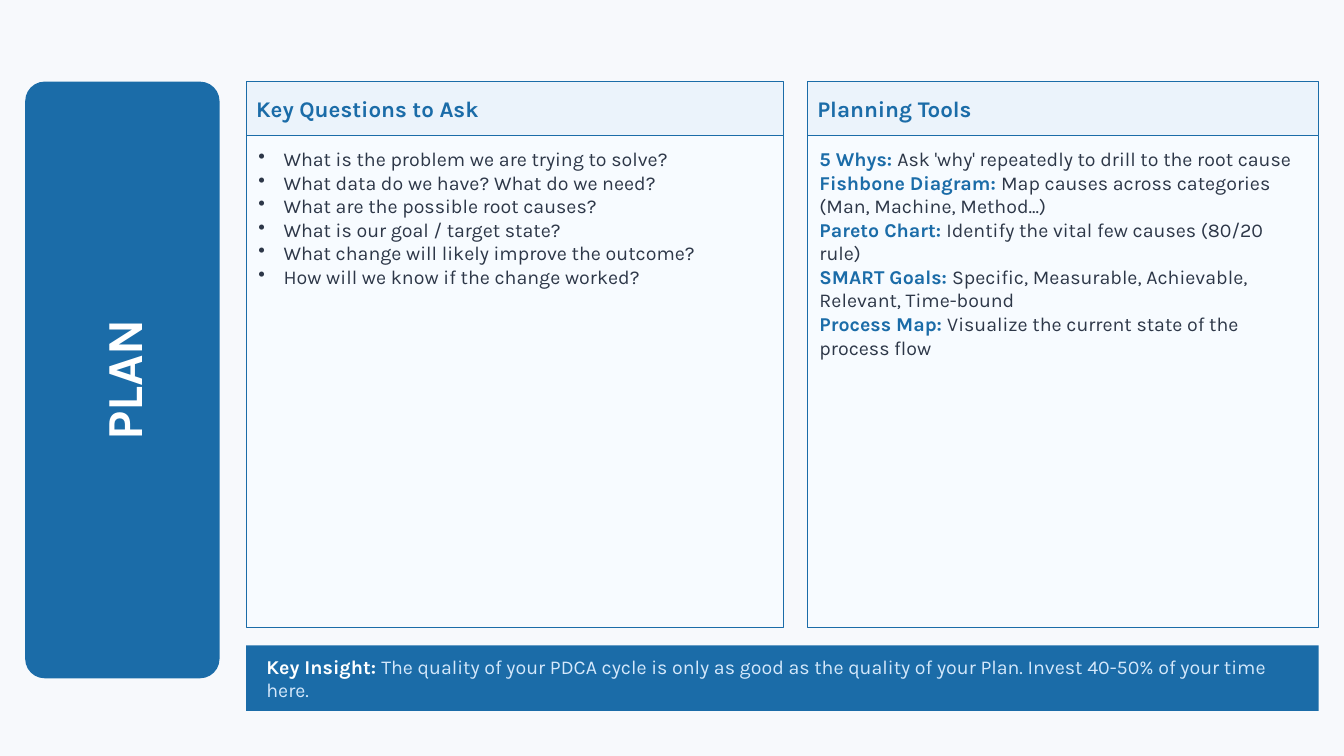
from lxml import etree
from pptx import Presentation
from pptx.dml.color import RGBColor
from pptx.enum.shapes import MSO_SHAPE as Preset
from pptx.enum.text import MSO_ANCHOR as Anchor, MSO_AUTO_SIZE as AutoSize, PP_ALIGN as Align
from pptx.oxml.ns import qn
from pptx.util import Pt

FONT = "Karla"
BLUE, INK, WHITE = "1B6CA8", "2D3748", "FFFFFF"
PAGE_FILL, HEADER_FILL, BODY_FILL, INSIGHT_INK = "F7F9FC", "EBF3FB", "F7FBFF", "D4E8FB"
TOP, HEADER_HEIGHT, PANEL_HEIGHT = 58.3, 38.2, 390.3

QUESTIONS = [
    "What is the problem we are trying to solve?",
    "What data do we have? What do we need?",
    "What are the possible root causes?",
    "What is our goal / target state?",
    "What change will likely improve the outcome?",
    "How will we know if the change worked?",
]
TOOLS = [
    ("5 Whys: ", "Ask 'why' repeatedly to drill to the root cause"),
    ("Fishbone Diagram: ", "Map causes across categories (Man, Machine, Method...)"),
    ("Pareto Chart: ", "Identify the vital few causes (80/20 rule)"),
    ("SMART Goals: ", "Specific, Measurable, Achievable, Relevant, Time-bound"),
    ("Process Map: ", "Visualize the current state of the process flow"),
]


def color(value):
    return RGBColor.from_string(value)


def style_font(font, size, ink, bold=False):
    font.name, font.size, font.bold = FONT, Pt(size), bold
    font.color.rgb = color(ink)


def set_frame(shape, anchor, side=0, vertical=0):
    frame = shape.text_frame
    frame.word_wrap = True
    frame.auto_size = AutoSize.NONE
    frame.vertical_anchor = anchor
    frame.margin_left = frame.margin_right = Pt(side)
    frame.margin_top = frame.margin_bottom = Pt(vertical)
    return frame


def add_block(page, box, fill, line=None, preset=Preset.RECTANGLE):
    shape = page.shapes.add_shape(preset, *map(Pt, box))
    shape.shadow.inherit = False
    shape.fill.solid()
    shape.fill.fore_color.rgb = color(fill)
    if line:
        shape.line.color.rgb = color(line)
        shape.line.width = Pt(0.72)
    else:
        shape.line.fill.background()
    return shape


def add_paragraphs(frame, count):
    """Return count left-aligned paragraphs, the first being the frame's own."""
    paras = [frame.paragraphs[0]] + [frame.add_paragraph() for _ in range(count - 1)]
    for para in paras:
        para.alignment = Align.LEFT
    return paras


def write_labelled(para, label, text, label_ink, text_ink):
    for content, ink, bold in ((label, label_ink, True), (text, text_ink, False)):
        span = para.add_run()
        span.text = content
        style_font(span.font, 14, ink, bold)


def add_bullet(para, indent):
    properties = para._p.get_or_add_pPr()
    properties.set("marL", str(Pt(indent)))
    properties.set("indent", str(-Pt(indent)))
    etree.SubElement(properties, qn("a:buChar")).set("char", "•")


def add_phase_band(page, box):
    """Rounded band with the slide title turned to read upwards."""
    left, top, width, height = box
    band = add_block(page, box, BLUE, preset=Preset.ROUNDED_RECTANGLE)
    band.adjustments[0] = 0.1

    title = page.shapes.title
    title.left, title.top = Pt(left + (width - height) / 2), Pt(top + (height - width) / 2)
    title.width, title.height = Pt(height), Pt(width)
    title.rotation = 270
    page.shapes._spTree.append(title._element)  # bring in front of the band
    para = set_frame(title, Anchor.MIDDLE).paragraphs[0]
    para.text = "PLAN"
    para.alignment = Align.CENTER
    style_font(para.font, 36, WHITE, True)


def add_panel(page, box, heading):
    """Draw a headed panel and return the text frame of its body."""
    left, top, width, height = box
    header = add_block(page, (left, top, width, HEADER_HEIGHT), HEADER_FILL, BLUE)
    para = add_paragraphs(set_frame(header, Anchor.MIDDLE, 7.2), 1)[0]
    para.text = heading
    style_font(para.font, 16, BLUE, True)
    body_box = (left, top + HEADER_HEIGHT, width, height - HEADER_HEIGHT)
    body = add_block(page, body_box, BODY_FILL, BLUE)
    return set_frame(body, Anchor.TOP, 8.64, 8.64)


def add_questions(page, box):
    frame = add_panel(page, box, "Key Questions to Ask")
    for para, question in zip(add_paragraphs(frame, len(QUESTIONS)), QUESTIONS):
        add_bullet(para, 18)
        para.text = question
        style_font(para.font, 14, INK)


def add_tools(page, box):
    frame = add_panel(page, box, "Planning Tools")
    for para, (tool, use) in zip(add_paragraphs(frame, len(TOOLS)), TOOLS):
        write_labelled(para, tool, use, BLUE, INK)


def add_insight(page, box):
    frame = set_frame(add_block(page, box, BLUE), Anchor.MIDDLE, 14.4)
    write_labelled(
        add_paragraphs(frame, 1)[0],
        "Key Insight: ",
        "The quality of your PDCA cycle is only as good as the quality of your Plan. "
        "Invest 40-50% of your time here.",
        WHITE,
        INSIGHT_INK,
    )


def main():
    deck = Presentation()
    deck.slide_width, deck.slide_height = Pt(960), Pt(540)
    page = deck.slides.add_slide(deck.slide_layouts[5])
    page.background.fill.solid()
    page.background.fill.fore_color.rgb = color(PAGE_FILL)

    add_phase_band(page, (18, TOP, 138.8, 426.2))
    add_questions(page, (175.9, TOP, 383.8, PANEL_HEIGHT))
    add_tools(page, (576.7, TOP, 365.2, PANEL_HEIGHT))
    add_insight(page, (175.9, 461, 766, 46.8))
    deck.save("out.pptx")


if __name__ == "__main__":
    main()
